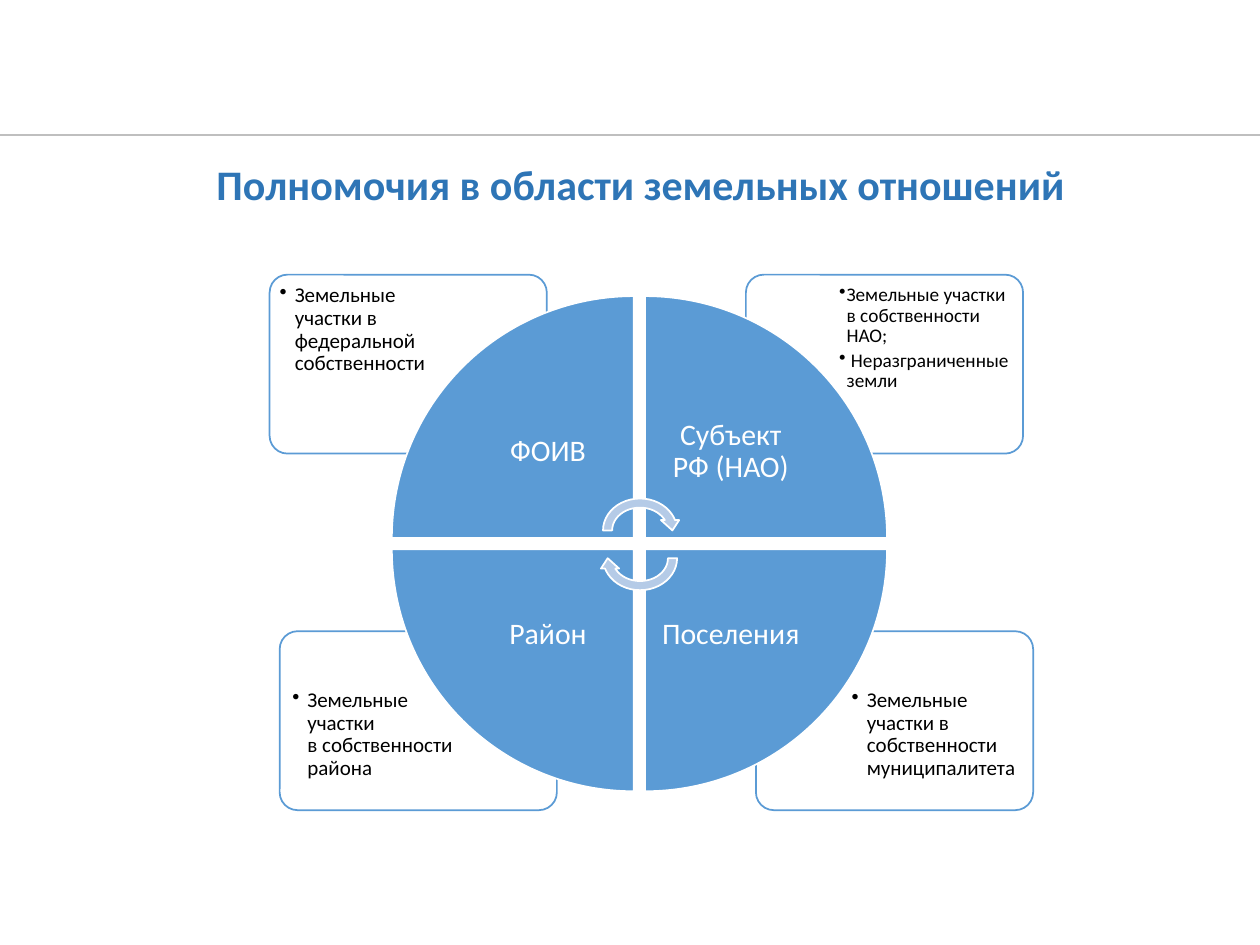
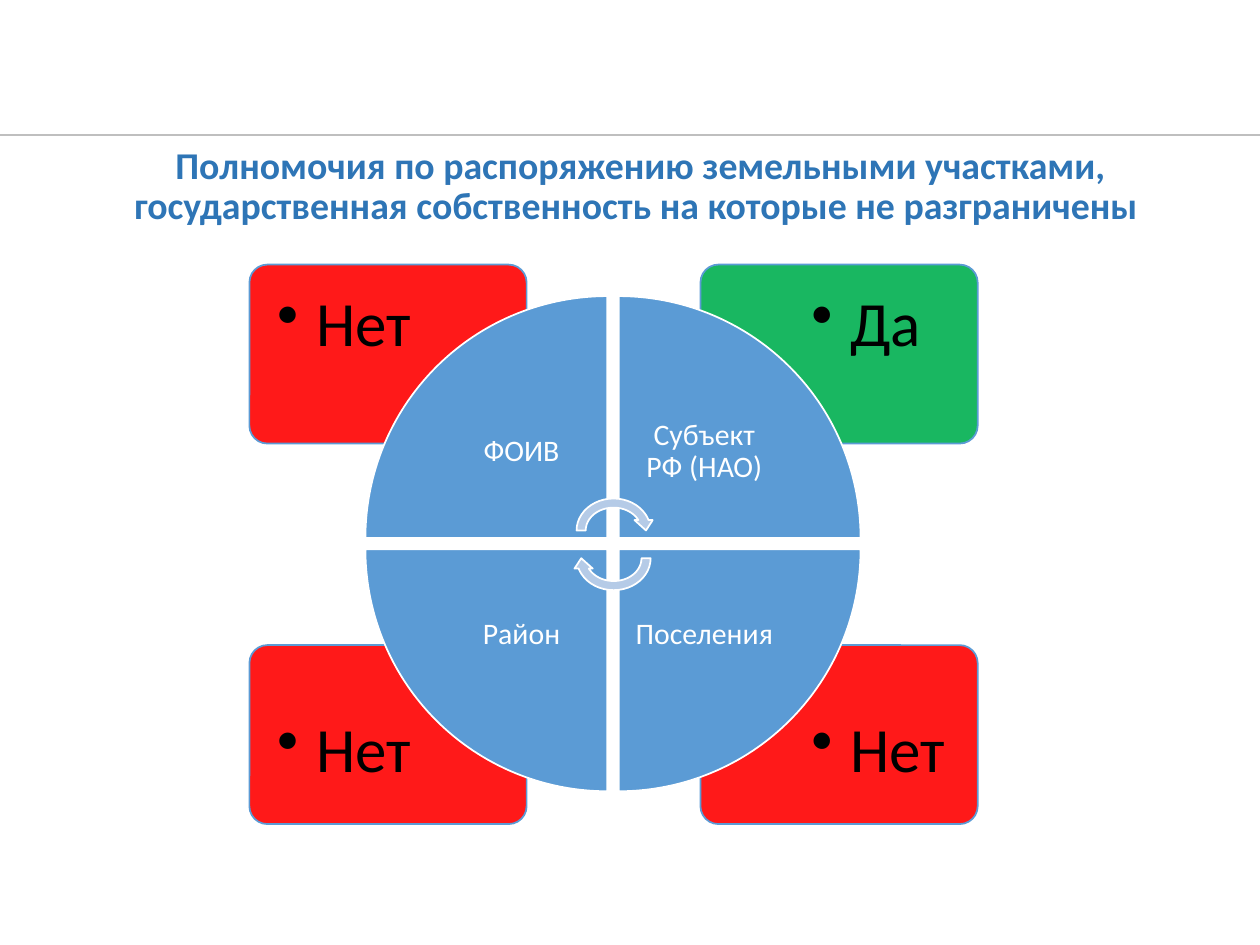
import itertools

import pptx
import pptx.dml.color
import pptx.enum.shapes
import pptx.enum.text
import pptx.oxml.ns
import pptx.util
from lxml import etree

Inches = pptx.util.Inches
Pt = pptx.util.Pt
Shape = pptx.enum.shapes.MSO_SHAPE
Align = pptx.enum.text.PP_ALIGN
Anchor = pptx.enum.text.MSO_ANCHOR
qn = pptx.oxml.ns.qn


def color(hex_string):
    return pptx.dml.color.RGBColor.from_string(hex_string)


class Deck:
    FONT = "Calibri"
    TITLE = "2E75B6"
    RULE = "BFBFBF"
    BLUE = "5B9BD5"
    PALE_BLUE = "B5CBE7"
    WHITE = "FFFFFF"
    BLACK = "000000"
    BOX_WIDTH, BOX_HEIGHT = 2.2, 1.42
    WHEEL_TOP, WEDGE, PITCH = 2.35, 1.92, 2.01
    LABEL = 1.36
    LABELS = ["ФОИВ", "Субъект РФ (НАО)", "Район", "Поселения"]
    ROTATIONS = [0, 90, 270, 180]

    def __init__(self):
        self.presentation = pptx.Presentation()
        self.presentation.slide_width = Inches(10)
        self.presentation.slide_height = Inches(7.5)
        self.slide = None

    def add_slide(self, title, top, height, size):
        layout = self.presentation.slide_layouts[5]
        self.slide = self.presentation.slides.add_slide(layout)
        shape = self.slide.shapes.title
        shape.left, shape.top = Inches(0.83), Inches(top)
        shape.width, shape.height = Inches(8.51), Inches(height)
        frame = self.prepare(shape, Anchor.BOTTOM)
        self.fill_paragraph(frame.paragraphs[0], title, size, self.TITLE, Align.CENTER, bold=True)
        self.add_rule(1.07)

    def add_rule(self, top):
        rule = self.slide.shapes.add_connector(
            pptx.enum.shapes.MSO_CONNECTOR.STRAIGHT,
            Inches(0), Inches(top), Inches(10), Inches(top))
        rule.line.color.rgb = color(self.RULE)
        rule.line.width = Pt(1)
        etree.SubElement(rule._element.spPr, qn("a:effectLst"))

    def prepare(self, shape, anchor):
        frame = shape.text_frame
        frame.word_wrap = True
        frame.auto_size = pptx.enum.text.MSO_AUTO_SIZE.NONE
        frame.vertical_anchor = anchor
        return frame

    def fill_paragraph(self, paragraph, text, size, text_color, align, bold=False):
        paragraph.alignment = align
        paragraph.line_spacing = 0.9
        for index, line in enumerate(text.split("\n")):
            if index:
                paragraph.add_line_break()
            run = paragraph.add_run()
            run.text = line
            run.font.name = self.FONT
            run.font.size = Pt(size)
            run.font.bold = bold
            run.font.color.rgb = color(text_color)

    def add_text(self, left, top, width, height, inset, anchor):
        box = self.slide.shapes.add_textbox(
            Inches(left), Inches(top), Inches(width), Inches(height))
        frame = self.prepare(box, anchor)
        frame.margin_left = frame.margin_right = Inches(inset)
        frame.margin_top = frame.margin_bottom = Inches(inset)
        return frame

    def add_bullets(self, left, top, items, size, inset, indent):
        frame = self.add_text(left, top, 1.47, 1, inset, Anchor.TOP)
        for index, item in enumerate(items):
            paragraph = frame.add_paragraph() if index else frame.paragraphs[0]
            self.fill_paragraph(paragraph, item, size, self.BLACK, Align.LEFT)
            paragraph.space_after = Pt(round(size * 0.18))
            properties = paragraph._p.get_or_add_pPr()
            properties.set("marL", str(Inches(indent)))
            properties.set("indent", str(-Inches(indent)))
            etree.SubElement(properties, qn("a:buChar"), char="•")

    def add_shape(self, kind, left, top, width, height, fill, line, rotation=0):
        shape = self.slide.shapes.add_shape(
            kind, Inches(left), Inches(top), Inches(width), Inches(height))
        shape.shadow.inherit = False
        shape.rotation = rotation
        if fill:
            shape.fill.solid()
            shape.fill.fore_color.rgb = color(fill)
        else:
            shape.fill.background()
        shape.line.color.rgb = color(line)
        shape.line.width = Pt(1)
        return shape

    def add_box(self, left, top, fill=None):
        box = self.add_shape(Shape.ROUNDED_RECTANGLE, left, top,
                             self.BOX_WIDTH, self.BOX_HEIGHT, fill, self.BLUE)
        box.adjustments[0] = 0.1
        if fill:
            solid_fill = box._element.spPr.find(qn("a:solidFill"))
            etree.SubElement(solid_fill[0], qn("a:alpha"), val="90000")

    def add_corner(self, row, column, left, top, items, size, inset, indent, fill=None):
        self.add_box(left, top, fill)
        self.add_bullets(left + (0.03, 0.69)[column], top + (0.03, 0.39)[row],
                         items, size, inset, indent)

    def add_wheel(self, left):
        cells = itertools.product(range(2), range(2))
        inner = self.WEDGE - self.LABEL
        for (row, column), label, rotation in zip(cells, self.LABELS, self.ROTATIONS):
            wedge_left = left + column * self.PITCH
            wedge_top = self.WHEEL_TOP + row * self.PITCH
            self.add_shape(Shape.PIE_WEDGE, wedge_left, wedge_top, self.WEDGE, self.WEDGE,
                           self.BLUE, self.WHITE, rotation)
            frame = self.add_text(wedge_left + inner * (1 - column),
                                  wedge_top + inner * (1 - row),
                                  self.LABEL, self.LABEL, 0.13, Anchor.MIDDLE)
            self.fill_paragraph(frame.paragraphs[0], label, 17, self.WHITE, Align.CENTER)
        for top, rotation in ((3.92, 0), (4.14, 180)):
            self.add_shape(Shape.CIRCULAR_ARROW, left + 1.64, top, 0.66, 0.58,
                           self.PALE_BLUE, self.WHITE, rotation)


def add_land_powers(deck):
    deck.add_slide("Полномочия в области земельных отношений", 1.16, 0.55, 24)
    corners = [
        (1, 1, 6, 5.01, ["Земельные участки в собственности муниципалитета"], 12, 0.07, 0.12),
        (1, 0, 2.22, 5.01, ["Земельные участки \nв собственности района"], 12, 0.07, 0.12),
        (0, 1, 5.92, 2.18, ["Земельные участки в собственности НАО;",
                            " Неразграниченные земли"], 11, 0.05, 0.06),
        (0, 0, 2.14, 2.18, ["Земельные участки в федеральной собственности"], 12, 0.05, 0.12),
    ]
    for corner in corners:
        deck.add_corner(*corner)
    deck.add_wheel(3.11)


def add_disposal_powers(deck):
    deck.add_slide("Полномочия по распоряжению земельными участками, "
                   "государственная собственность на которые не разграничены ",
                   1.07, 0.79, 21.6)
    answer_colors = {"Нет": "FF0000", "Да": "00B050"}
    answers = [["Нет", "Да"], ["Нет", "Нет"]]
    for row, column in itertools.product(range(2), range(2)):
        answer = answers[row][column]
        deck.add_corner(row, column, (1.98, 5.56)[column], (2.1, 5.12)[row],
                        [answer], 36, 0.19, 0.31, answer_colors[answer])
    deck.add_wheel(2.9)


def main():
    deck = Deck()
    add_land_powers(deck)
    add_disposal_powers(deck)
    deck.presentation.save("out.pptx")


if __name__ == "__main__":
    main()
